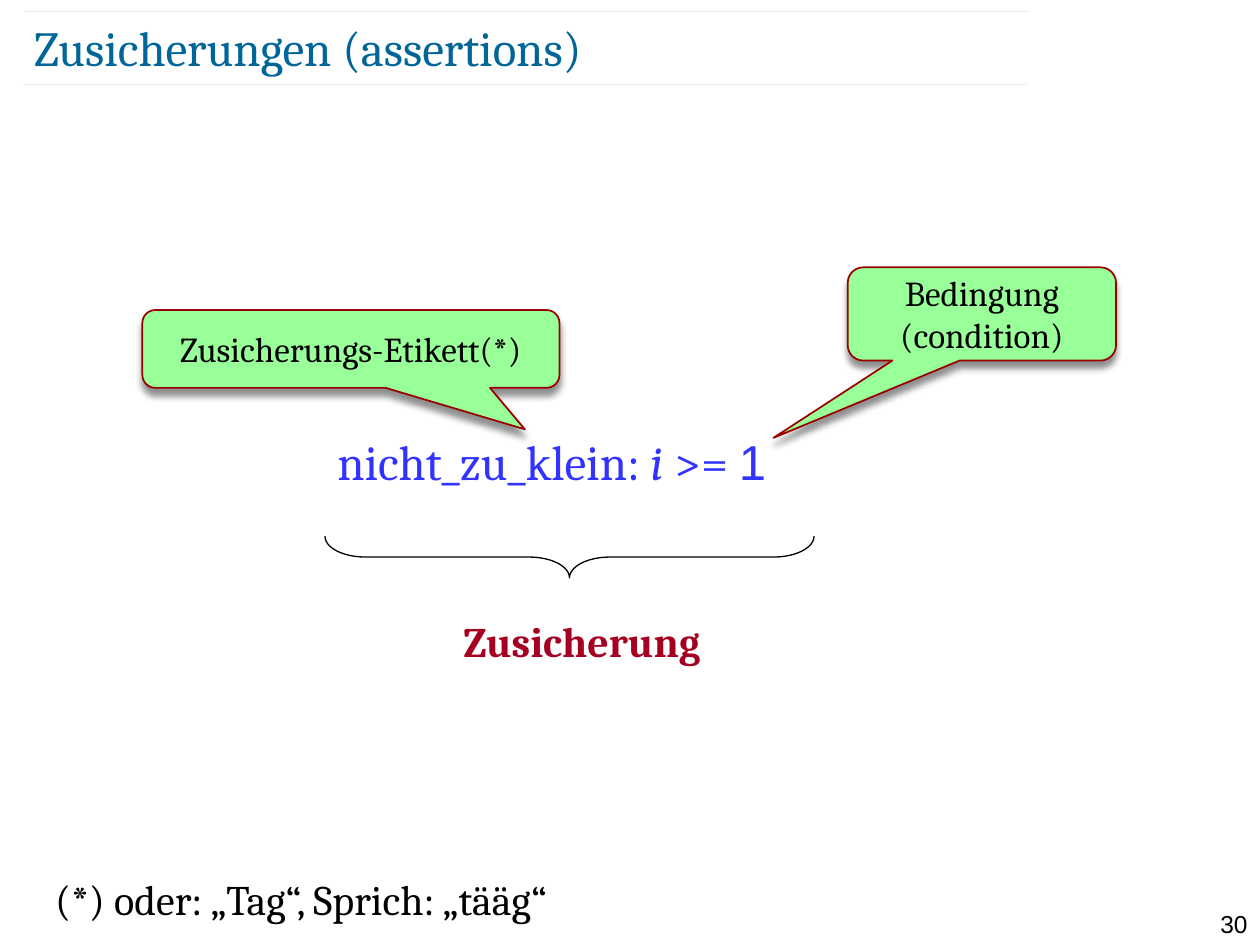
from lxml.etree import SubElement
from pptx import Presentation
from pptx.dml.color import RGBColor
from pptx.enum.shapes import MSO_CONNECTOR, MSO_SHAPE
from pptx.enum.text import MSO_ANCHOR, PP_ALIGN
from pptx.oxml.ns import qn
from pptx.util import Cm, Pt

TEAL = RGBColor(0x00, 0x66, 0x99)
BLUE = RGBColor(0x33, 0x33, 0xFF)
RED = RGBColor(0xA5, 0x00, 0x21)
DARK_RED = RGBColor(0x99, 0x00, 0x00)
GREEN = RGBColor(0x99, 0xFF, 0x99)
BLACK = RGBColor(0x00, 0x00, 0x00)
SERIF, SANS = "Cambria", "Arial"


def write(shape, runs, size, color, align=PP_ALIGN.LEFT, anchor=MSO_ANCHOR.TOP,
          insets=(0.25, 0.13)):
    """Fill a shape with one paragraph of (text, font settings) runs."""
    tf = shape.text_frame
    frame = {"word_wrap": True, "vertical_anchor": anchor,
             "margin_left": Cm(insets[0]), "margin_right": Cm(insets[0]),
             "margin_top": Cm(insets[1]), "margin_bottom": Cm(insets[1])}
    for name, value in frame.items():
        setattr(tf, name, value)
    p = tf.paragraphs[0]
    p.alignment = align
    for text, extra in runs:
        r = p.add_run()
        r.text = text
        r.font.color.rgb = color
        for name, value in {"name": SERIF, "size": Pt(size), **extra}.items():
            setattr(r.font, name, value)


def add_text(s, box, runs, size, color, **layout):
    """Add a text box at the given box."""
    write(s.shapes.add_textbox(*map(Cm, box)), runs, size, color, **layout)


def add_rule(s, x, y, width):
    """Draw a faint hairline."""
    c = s.shapes.add_connector(MSO_CONNECTOR.STRAIGHT, Cm(x), Cm(y), Cm(x + width), Cm(y))
    c.line.width = Pt(0.1)
    c.line.color.rgb = TEAL
    rgb = c._element.spPr.find(".//" + qn("a:srgbClr"))
    SubElement(rgb, qn("a:alpha"), val="35000")
    SubElement(c._element.spPr, qn("a:effectLst"))


def add_header(s, box, title):
    """Place the title between two hairlines."""
    x, y, w, h = box
    add_rule(s, x, y + h, w)
    add_rule(s, x + 0.05, y, w)
    add_text(s, (x + 0.23, y + 0.1, w + 1.8, 1.22), [(title, {})], 28, TEAL,
             anchor=MSO_ANCHOR.MIDDLE, insets=(0, 0))


def add_callout(s, box, text, tip):
    """Add a green speech bubble with its tip at a relative offset."""
    sp = s.shapes.add_shape(MSO_SHAPE.ROUNDED_RECTANGULAR_CALLOUT, *map(Cm, box))
    for i, value in enumerate((*tip, 0.167)):
        sp.adjustments[i] = value
    sp.fill.solid()
    sp.fill.fore_color.rgb = GREEN
    sp.line.color.rgb = DARK_RED
    sp.line.width = Pt(1)
    sp.shadow.inherit = False
    effects = sp._element.spPr.find(qn("a:effectLst"))
    shadow = SubElement(effects, qn("a:outerShdw"), blurRad=str(Pt(4)), dist=str(Pt(4)),
                        dir="5400000", algn="ctr", rotWithShape="0")
    rgb = SubElement(shadow, qn("a:srgbClr"), val=str(BLACK))
    SubElement(rgb, qn("a:alpha"), val="43000")
    write(sp, [(text, {})], 20, BLACK, align=PP_ALIGN.CENTER,
          anchor=MSO_ANCHOR.MIDDLE, insets=(0, 0.13))


def add_brace(s, box):
    """Draw a horizontal brace pointing down that fills the box."""
    x, y, w, h = box
    left, top = x + (w - h) / 2, y + (h - w) / 2
    sp = s.shapes.add_shape(MSO_SHAPE.RIGHT_BRACE, Cm(left), Cm(top), Cm(h), Cm(w))
    sp.rotation = 90
    sp.adjustments[0] = 0.97
    sp.adjustments[1] = 0.5
    sp.fill.background()
    sp.line.color.rgb = BLACK
    sp.line.width = Pt(0.75)
    sp.shadow.inherit = False


def add_assertion(s, box):
    """Show the assertion with its brace, name and two callouts."""
    x, y, w, h = box
    code = [("nicht_zu_klein: ", {}), ("i", {"italic": True}), (" >= ", {}),
            ("1", {"name": SANS})]
    add_brace(s, (x, y + 2.25, w, 0.84))
    add_text(s, (x, y, w + 0.06, h), code, 28, BLUE)
    add_text(s, (x + 2.54, y + 3.71, 5.54, 1.27), [("Zusicherung", {"bold": True})], 24, RED)
    add_callout(s, (x + 10.54, y - 3.17, 5.41, 1.88), "Bedingung (condition)", (-0.777, 1.329))
    add_callout(s, (x - 3.68, y - 2.31, 8.41, 1.57), "Zusicherungs-Etikett(*)", (0.417, 1.032))


def add_footer(s, box, note, number):
    """Place the footnote at the left and the page number at the right."""
    x, y, w, h = box
    add_text(s, (x, y, 14.35, h), [(note, {})], 24, BLACK)
    add_text(s, (x + w - 1.4, y + 0.71, 1.4, 0.61), [(number, {"name": SANS})], 14, BLACK,
             align=PP_ALIGN.RIGHT)


def main():
    """Build and save the slide."""
    prs = Presentation()
    prs.slide_width, prs.slide_height = Cm(25.4), Cm(19.05)
    s = prs.slides.add_slide(prs.slide_layouts[6])
    add_header(s, (0.46, 0.23, 20.24, 1.47), "Zusicherungen (assertions)")
    add_assertion(s, (6.55, 8.56, 9.86, 1.45))
    add_footer(s, (0.86, 17.48, 24.54, 1.27), "(*) oder: „Tag“, Sprich: „tääg“", "30")
    prs.save("out.pptx")


if __name__ == "__main__":
    main()
